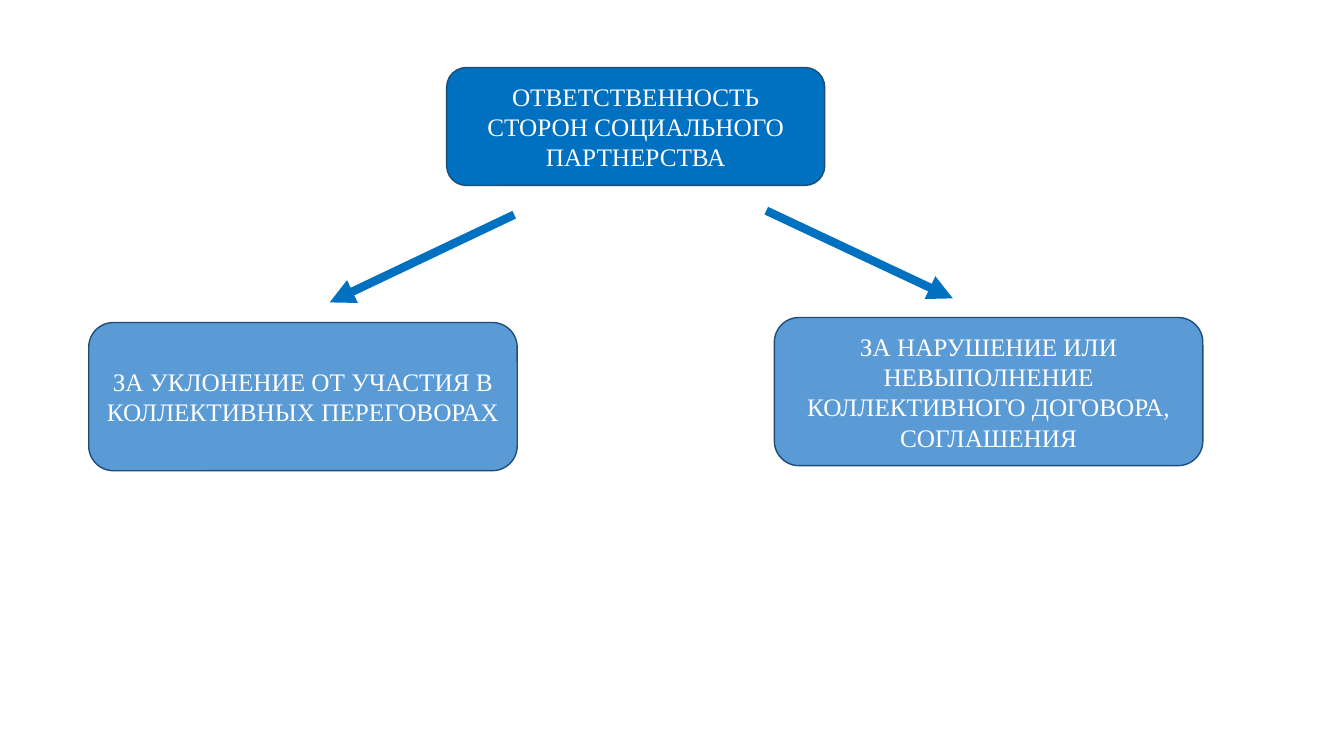
from dataclasses import dataclass

from lxml import etree
from pptx import Presentation
from pptx.dml.color import RGBColor as RGB
from pptx.enum.shapes import MSO_CONNECTOR as CONNECTOR, MSO_SHAPE as SHAPE
from pptx.enum.text import MSO_ANCHOR as ANCHOR, PP_ALIGN as ALIGN
from pptx.oxml.ns import qn
from pptx.util import Inches, Pt


@dataclass(frozen=True)
class Theme:
    main: RGB = RGB(0x00, 0x70, 0xC0)
    branch: RGB = RGB(0x5B, 0x9B, 0xD5)
    outline: RGB = RGB(0x1F, 0x4D, 0x78)
    text: RGB = RGB(0xFF, 0xFF, 0xFF)
    font: str = "Times New Roman"
    size: int = 18
    outline_width: int = 1
    arrow_width: int = 6


theme = Theme()


def write_text(sp, text, *, size=theme.size, color=theme.text, align=ALIGN.CENTER):
    tf = sp.text_frame
    tf.word_wrap = True
    tf.vertical_anchor = ANCHOR.MIDDLE
    p = tf.paragraphs[0]
    p.alignment = align
    r = p.add_run()
    r.text = text
    r.font.name = theme.font
    r.font.size = Pt(size)
    r.font.color.rgb = color


prs = Presentation()
prs.slide_width, prs.slide_height = Inches(13.33), Inches(7.5)
s = prs.slides.add_slide(prs.slide_layouts[6])

# Heading and its two branches
branch_size = (4.25, 1.47)
boxes = [
    ("ОТВЕТСТВЕННОСТЬ СТОРОН СОЦИАЛЬНОГО ПАРТНЕРСТВА",
     (4.43, 0.67), (3.75, 1.17), theme.main),
    ("ЗА НАРУШЕНИЕ ИЛИ НЕВЫПОЛНЕНИЕ КОЛЛЕКТИВНОГО ДОГОВОРА, СОГЛАШЕНИЯ",
     (7.68, 3.15), branch_size, theme.branch),
    ("ЗА УКЛОНЕНИЕ ОТ УЧАСТИЯ В КОЛЛЕКТИВНЫХ ПЕРЕГОВОРАХ",
     (0.88, 3.2), branch_size, theme.branch),
]
for text, position, size, fill in boxes:
    sp = s.shapes.add_shape(SHAPE.ROUNDED_RECTANGLE, *map(Inches, position + size))
    sp.shadow.inherit = False
    sp.fill.solid()
    sp.fill.fore_color.rgb = fill
    sp.line.color.rgb = theme.outline
    sp.line.width = Pt(theme.outline_width)
    write_text(sp, text)

# Arrows from the heading towards the branches
for start, end in [((7.6, 2.09), (9.45, 2.96)), ((5.1, 2.13), (3.27, 3))]:
    arrow = s.shapes.add_connector(CONNECTOR.STRAIGHT, *map(Inches, start + end))
    arrow.line.color.rgb = theme.main
    arrow.line.width = Pt(theme.arrow_width)
    etree.SubElement(arrow.line._get_or_add_ln(), qn("a:tailEnd"), type="triangle")
    etree.SubElement(arrow._element.spPr, qn("a:effectLst"))

prs.save("out.pptx")
